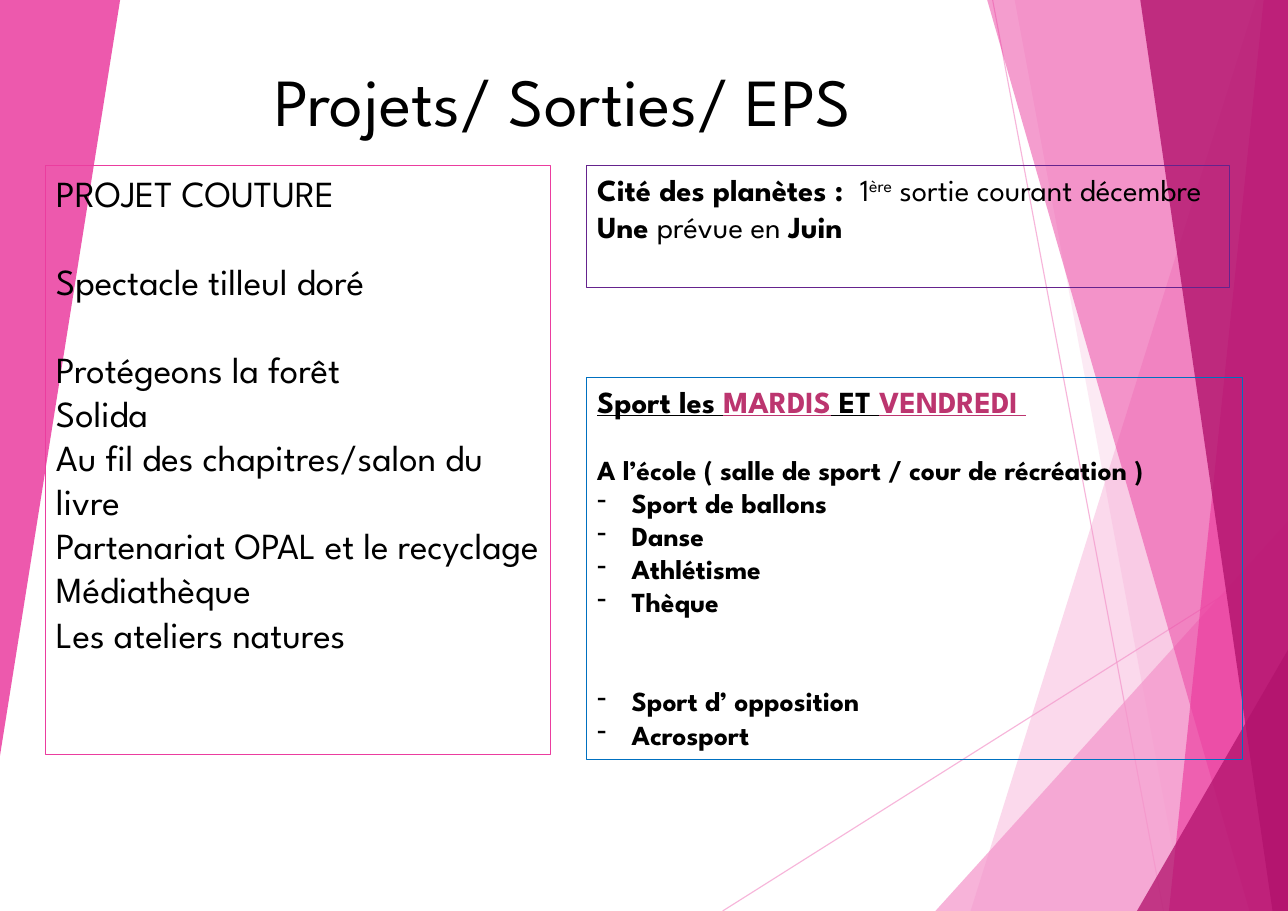
from dataclasses import dataclass
from typing import Optional

from lxml.etree import SubElement as Sub
from pptx import Presentation
from pptx.dml.color import RGBColor as Rgb
from pptx.enum.shapes import MSO_CONNECTOR as Link, MSO_SHAPE as Form
from pptx.enum.text import MSO_ANCHOR as Anchor, PP_ALIGN as Align
from pptx.oxml.ns import qn
from pptx.util import Pt


@dataclass(frozen=True)
class Theme:
    """Colours, type sizes and font of the slide."""
    font: str = "League Spartan"
    black: str = "000000"
    light: str = "F496CB"
    pink: str = "EB3D9F"
    deep: str = "B2136D"
    rose: str = "BC356F"
    plum: str = "65238D"
    blue: str = "0070C0"
    title: int = 44
    large: int = 24
    mid: int = 20
    small: int = 18
    line: float = 0.75


LOOK = Theme()
WIDE, HIGH = 841.68, 595.44
INDENT = 22.5
PITCH = 1.2


@dataclass(frozen=True)
class Ray:
    """A thin line behind the text."""
    start: tuple[float, float]
    end: tuple[float, float]


@dataclass(frozen=True)
class Facet:
    """A see-through polygon."""
    dots: tuple[tuple[float, float], ...]
    fill: str
    alpha: int


@dataclass(frozen=True)
class Span:
    """A run of text."""
    text: str
    bold: bool = False
    under: bool = False
    color: str = LOOK.black
    lift: int = 0


@dataclass(frozen=True)
class Para:
    """A paragraph with the number of open lines above it."""
    spans: tuple[Span, ...]
    size: int
    gap: int = 0
    dash: bool = False


@dataclass(frozen=True)
class Box:
    """A text frame, outlined if it has a line colour."""
    left: float
    top: float
    width: float
    height: float
    paras: tuple[Para, ...]
    line: Optional[str] = None


def plain(text: str, gap: int = 0) -> Para:
    """Return a large plain paragraph."""
    return Para((Span(text),), LOOK.large, gap)


def sport(text: str, gap: int = 0, dash: bool = True) -> Para:
    """Return a small bold paragraph."""
    return Para((Span(text, True),), LOOK.small, gap, dash)


RAYS = (
    Ray((472.3, HIGH), (WIDE, 362.4)),
    Ray((648.7, 0), (760.3, HIGH)),
)

FACETS = (
    Facet(((820.8, 0), (634.3, HIGH), (WIDE, HIGH), (WIDE, 0)), LOOK.light, 36),
    Facet(((663.1, 0), (774, HIGH), (WIDE, HIGH), (WIDE, 0)), LOOK.light, 20),
    Facet(((611.3, HIGH), (WIDE, 340.6), (WIDE, HIGH)), LOOK.light, 72),
    Facet(((645.1, 0), (816.5, HIGH), (WIDE, HIGH), (WIDE, 0)), LOOK.pink, 50),
    Facet(((825.8, 0), (763.9, HIGH), (WIDE, HIGH), (WIDE, 0)), LOOK.pink, 66),
    Facet(((745.2, 0), (831.6, HIGH), (WIDE, HIGH), (WIDE, 0)), LOOK.deep, 80),
    Facet(((743, HIGH), (WIDE, 424.8), (WIDE, HIGH)), LOOK.deep, 76),
    Facet(((0, 0), (78.5, 0), (0, 493.9)), LOOK.pink, 85),
)

BOXES = (
    Box(156.2, 35.3, 423.4, 60.5, (
        Para((Span("Projets/ Sorties/ EPS"),), LOOK.title),
    )),
    Box(29.5, 108, 330.5, 385.2, (
        plain("PROJET COUTURE"),
        plain("Spectacle tilleul doré", 1),
        plain("Protégeons la forêt", 1),
        plain("Solida"),
        plain("Au fil des chapitres/salon du livre"),
        plain("Partenariat OPAL et le recyclage"),
        plain("Médiathèque"),
        plain("Les ateliers natures"),
    ), LOOK.pink),
    Box(383.2, 108, 420.5, 79.9, (
        Para((
            Span("Cité des planètes :  ", True),
            Span("1"),
            Span("ère", lift=30),
            Span(" sortie courant décembre"),
        ), LOOK.mid),
        Para((
            Span("Une ", True),
            Span("prévue en "),
            Span("Juin", True),
        ), LOOK.mid),
    ), LOOK.plum),
    Box(383.2, 247, 429.1, 249.6, (
        Para((
            Span("Sport les ", True, True),
            Span("MARDIS", True, True, LOOK.rose),
            Span(" ET ", True, True),
            Span("VENDREDI ", True, True, LOOK.rose),
        ), LOOK.mid),
        sport("A l’école ( salle de sport / cour de récréation )", 1, False),
        sport("Sport de ballons"),
        sport("Danse"),
        sport("Athlétisme"),
        sport("Thèque"),
        sport("Sport d’ opposition", 2),
        sport("Acrosport"),
    ), LOOK.blue),
)


def fade(shape, alpha: int) -> None:
    """Make the colour of a shape see-through."""
    for tint in shape._element.spPr.iter(qn("a:srgbClr")):
        Sub(tint, qn("a:alpha")).set("val", str(alpha * 1000))


def draw_ray(slide, ray: Ray) -> None:
    """Draw a thin line."""
    ends = [Pt(n) for n in ray.start + ray.end]
    line = slide.shapes.add_connector(Link.STRAIGHT, *ends)
    line.line.color.rgb = Rgb.from_string(LOOK.light)
    line.line.width = Pt(LOOK.line)
    fade(line, 70)
    Sub(line._element.spPr, qn("a:effectLst"))


def draw_facet(slide, facet: Facet) -> None:
    """Draw a polygon."""
    first, *rest = [(Pt(x), Pt(y)) for x, y in facet.dots]
    pen = slide.shapes.build_freeform(*first)
    pen.add_line_segments(rest, close=True)
    shape = pen.convert_to_shape()
    shape.shadow.inherit = False
    shape.fill.solid()
    shape.fill.fore_color.rgb = Rgb.from_string(facet.fill)
    shape.line.fill.background()
    fade(shape, facet.alpha)


def add_span(para, span: Span, size: int) -> None:
    """Add a run to a paragraph."""
    run = para.add_run()
    run.text = span.text
    font = run.font
    font.name, font.size = LOOK.font, Pt(size)
    font.bold, font.underline = span.bold, span.under
    font.color.rgb = Rgb.from_string(span.color)
    if span.lift:
        run._r.get_or_add_rPr().set("baseline", str(span.lift * 1000))


def draw_box(slide, box: Box) -> None:
    """Draw a text frame with its paragraphs."""
    area = [Pt(n) for n in (box.left, box.top, box.width, box.height)]
    if box.line:
        shape = slide.shapes.add_shape(Form.RECTANGLE, *area)
        shape.shadow.inherit = False
        shape.fill.background()
        shape.line.color.rgb = Rgb.from_string(box.line)
        shape.line.width = Pt(LOOK.line)
    else:
        shape = slide.shapes.add_textbox(*area)
    frame = shape.text_frame
    frame.word_wrap = bool(box.line)
    frame.vertical_anchor = Anchor.TOP
    for i, item in enumerate(box.paras):
        para = frame.add_paragraph() if i else frame.paragraphs[0]
        para.alignment = Align.LEFT if box.line else Align.CENTER
        para.space_before = Pt(item.gap * item.size * PITCH)
        if item.dash:
            props = para._p.get_or_add_pPr()
            props.set("marL", str(Pt(INDENT)))
            props.set("indent", str(-Pt(INDENT)))
            Sub(props, qn("a:buChar")).set("char", "-")
        for span in item.spans:
            add_span(para, span, item.size)


def main() -> None:
    """Build and save the slide."""
    deck = Presentation()
    deck.slide_width, deck.slide_height = Pt(WIDE), Pt(HIGH)
    slide = deck.slides.add_slide(deck.slide_layouts[6])
    for ray in RAYS:
        draw_ray(slide, ray)
    for facet in FACETS:
        draw_facet(slide, facet)
    for box in BOXES:
        draw_box(slide, box)
    deck.save("out.pptx")


if __name__ == "__main__":
    main()
